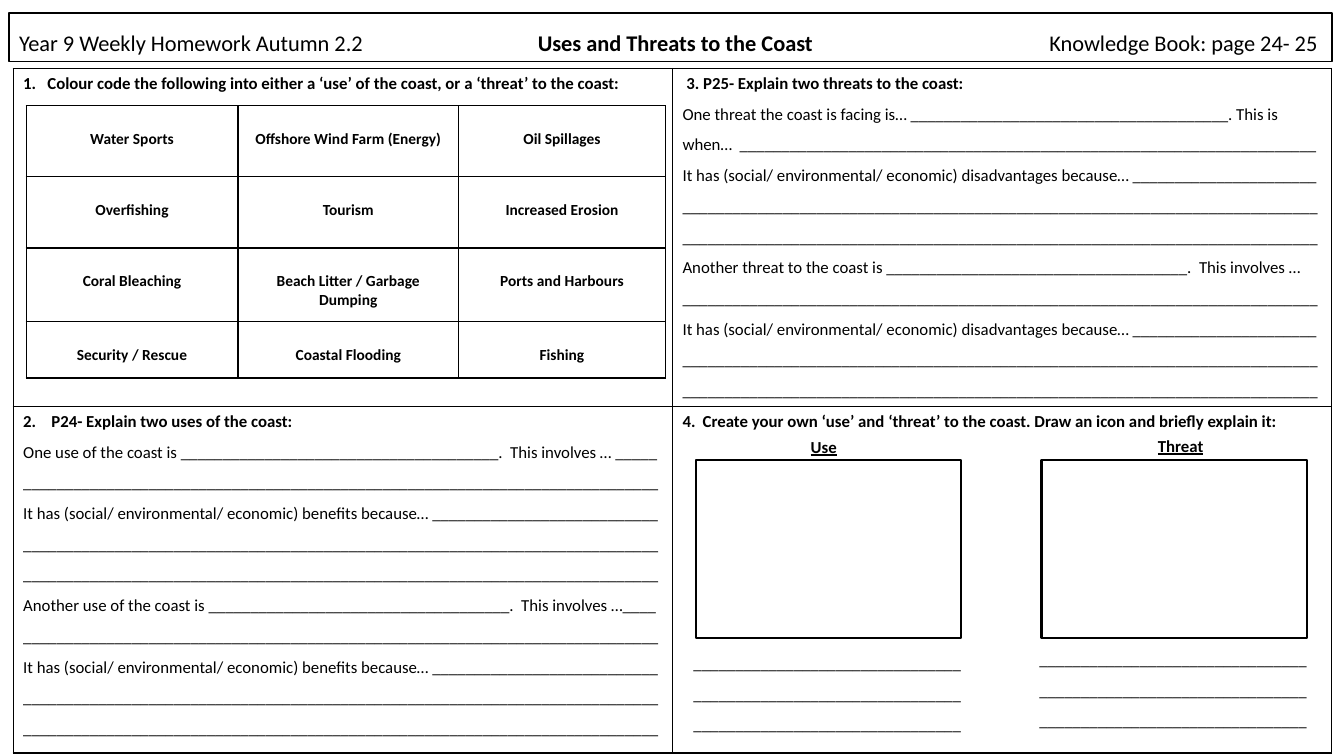
from lxml import etree
from pptx import Presentation
from pptx.dml.color import RGBColor
from pptx.enum.shapes import MSO_SHAPE as Shape
from pptx.enum.text import MSO_ANCHOR as Anchor, PP_ALIGN as Align
from pptx.oxml.ns import qn
from pptx.util import Inches, Pt

BLACK = RGBColor(0, 0, 0)
WHITE = RGBColor(255, 255, 255)
FULL_LINES = "_" * 152


def write(paragraph, text, tabs=(), spacing=1.0, align=Align.LEFT, **formats):
    paragraph.alignment = align
    paragraph.line_spacing = spacing
    if tabs:
        tab_list = etree.SubElement(paragraph._p.get_or_add_pPr(), qn("a:tabLst"))
        for position, kind in tabs:
            etree.SubElement(tab_list, qn("a:tab"), pos=str(Inches(position)), algn=kind)
    run = paragraph.add_run()
    run.text = text
    run.font.color.rgb = BLACK
    for name, value in {"name": "Calibri", "size": Pt(12), "bold": False, **formats}.items():
        setattr(run.font, name, value)


def add_grid(left, top, widths, heights):
    table = slide.shapes.add_table(
        len(heights), len(widths), Inches(left), Inches(top),
        Inches(sum(widths)), Inches(sum(heights))).table
    table.first_row = table.horz_banding = False
    for column, width in zip(table.columns, widths):
        column.width = Inches(width)
    for row, height in zip(table.rows, heights):
        row.height = Inches(height)
    for cell in table.iter_cells():
        properties = cell._tc.get_or_add_tcPr()
        for side in ("a:lnL", "a:lnR", "a:lnT", "a:lnB"):
            border = etree.SubElement(properties, qn(side), w=str(Pt(1)))
            fill = etree.SubElement(border, qn("a:solidFill"))
            etree.SubElement(fill, qn("a:srgbClr"), val=str(BLACK))
        cell.fill.background()
    return table


presentation = Presentation()
presentation.slide_width = Inches(13.33)
presentation.slide_height = Inches(7.5)
slide = presentation.slides.add_slide(presentation.slide_layouts[6])

boxes = []
for left, top, width, height, line_width in (
    (0.09, 0.13, 13.12, 0.48, 1),
    (6.9, 4.56, 2.63, 1.77, 1.5),
    (10.33, 4.56, 2.63, 1.77, 1.5),
):
    box = slide.shapes.add_shape(
        Shape.RECTANGLE, Inches(left), Inches(top), Inches(width), Inches(height))
    box.shadow.inherit = False
    box.fill.solid()
    box.fill.fore_color.rgb = WHITE
    box.line.color.rgb = BLACK
    box.line.width = Pt(line_width)
    boxes.append(box)

header = boxes[0].text_frame
header.vertical_anchor = Anchor.BOTTOM
header_paragraph = header.paragraphs[0]
write(header_paragraph, "Year 9 Weekly Homework Autumn 2.2\t",
      tabs=((6.51, "ctr"), (12.88, "r")), spacing=0.9, size=Pt(16))
write(header_paragraph, "Uses and Threats to the Coast", spacing=0.9, size=Pt(16), bold=True)
write(header_paragraph, "\tKnowledge Book: page 24- 25", spacing=0.9, size=Pt(16))

threat_reason = "It has (social/ environmental/ economic) disadvantages because… " + "_" * 22
use_reason = "It has (social/ environmental/ economic) benefits because… " + "_" * 27
threat_lines = (
    "One threat the coast is facing is… " + "_" * 38 + ". This is when…  " + "_" * 69,
    threat_reason,
    FULL_LINES + "Another threat to the coast is " + "_" * 36 + ".  This involves … " + "_" * 76,
    threat_reason,
    FULL_LINES,
)
use_lines = (
    "One use of the coast is " + "_" * 38 + ".  This involves … _____ " + "_" * 76,
    use_reason,
    FULL_LINES + "Another use of the coast is " + "_" * 36 + ".  This involves …____ " + "_" * 76,
    use_reason,
    FULL_LINES,
)
tasks = (
    ("1.\tColour code the following into either a ‘use’ of the coast, or a ‘threat’ to the coast:",
     0.24, ()),
    ("\u00a03. P25- Explain two threats to the coast:", 0.2, threat_lines),
    ("2.\tP24- Explain two uses of the coast:", 0.28, use_lines),
    ("4.\tCreate your own ‘use’ and ‘threat’ to the coast. Draw an icon and briefly explain it:",
     0.2, ()),
)
worksheet = add_grid(0.13, 0.68, (6.54, 6.54), (3.22, 3.44))
for cell, (heading, tab, lines) in zip(worksheet.iter_cells(), tasks):
    write(cell.text_frame.paragraphs[0], heading, tabs=((tab, "l"),), bold=True)
    for line in lines:
        write(cell.text_frame.add_paragraph(), line, spacing=1.5)

topics = (
    "Water Sports", "Offshore Wind Farm (Energy)", "Oil Spillages",
    "Overfishing", "Tourism", "Increased Erosion",
    "Coral Bleaching", "Beach Litter / Garbage Dumping", "Ports and Harbours",
    "Security / Rescue", "Coastal Flooding", "Fishing",
)
topic_table = add_grid(0.26, 1.05, (2.1, 2.19, 2.05), (0.7, 0.71, 0.73, 0.56))
for cell, topic in zip(topic_table.iter_cells(), topics):
    cell.margin_top = Inches(0.24)
    write(cell.text_frame.paragraphs[0], topic, align=Align.CENTER, size=Pt(11), bold=True)

label_format = {"align": Align.CENTER, "bold": True, "underline": True}
answer_format = {"spacing": 1.5}
for left, top, width, height, text, formats in (
    (6.78, 6.33, 2.87, 0.98, "_" * 96, answer_format),
    (10.21, 6.29, 2.87, 0.98, "_" * 96, answer_format),
    (7.87, 4.28, 0.6, 0.3, "Use", label_format),
    (11.34, 4.27, 0.74, 0.3, "Threat", label_format),
):
    frame = slide.shapes.add_textbox(
        Inches(left), Inches(top), Inches(width), Inches(height)).text_frame
    frame.word_wrap = True
    write(frame.paragraphs[0], text, **formats)

presentation.save("out.pptx")
